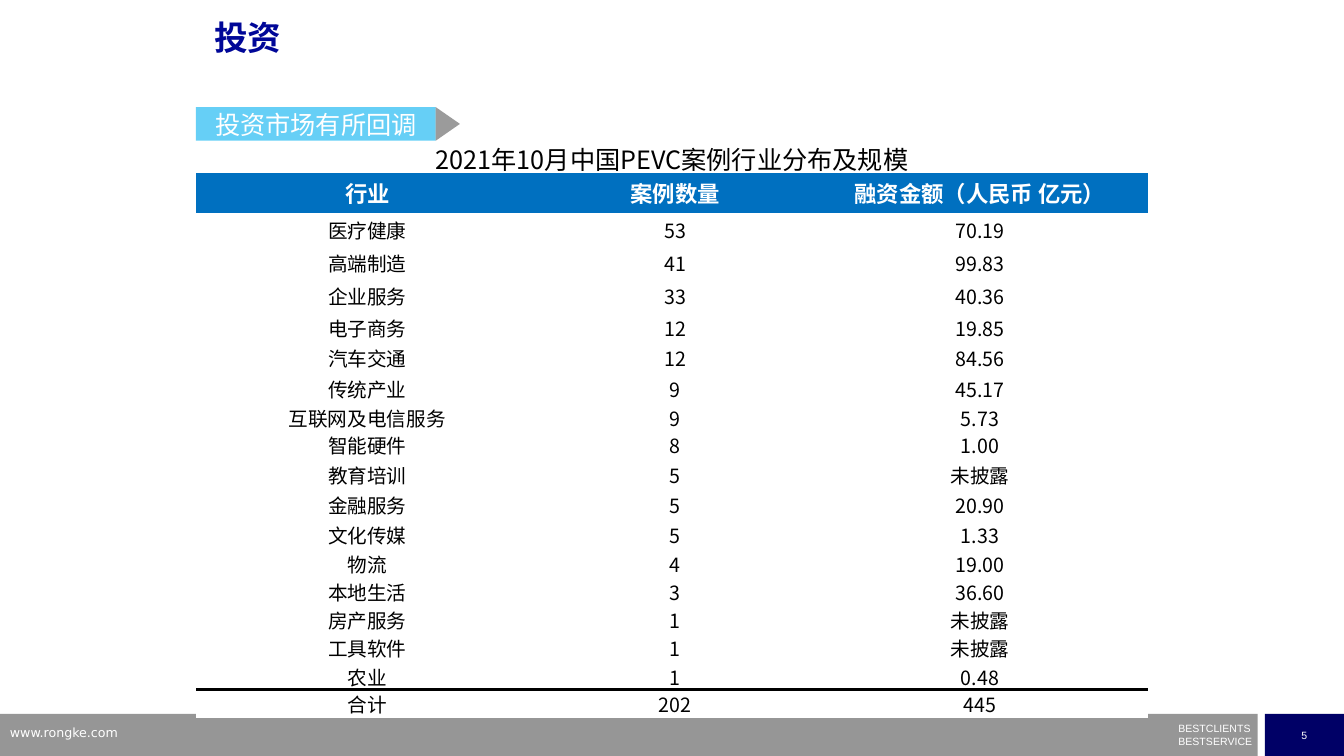
import pptx
import pptx.dml.color
import pptx.enum.shapes
import pptx.enum.text
import pptx.oxml.ns
import pptx.util
from dataclasses import dataclass
from lxml import etree

Pt = pptx.util.Pt
Shape = pptx.enum.shapes.MSO_SHAPE
Align = pptx.enum.text.PP_ALIGN
Anchor = pptx.enum.text.MSO_ANCHOR
qn = pptx.oxml.ns.qn


@dataclass(frozen=True)
class Theme:
    white: str = "FFFFFF"
    black: str = "000000"
    navy: str = "000066"
    title_blue: str = "000798"
    header_blue: str = "0070C0"
    ribbon_blue: str = "00B0F0"
    tip_gray: str = "595959"
    footer_gray: str = "969696"
    latin: str = "Arial"
    web: str = "DejaVu Sans"
    cjk: str = "Noto Sans CJK SC"
    title: float = 24
    caption: float = 18
    header: float = 16
    body: float = 14
    address: float = 9
    small: float = 7.5


THEME = Theme()
NO_STYLE_NO_GRID = "{2D5ABB26-0587-4C30-8999-92F81FD0307C}"

CAPTION = "2021年10月中国PEVC案例行业分布及规模"
HEADERS = ("行业", "案例数量", "融资金额（人民币 亿元）")
INDUSTRIES = (
    ("医疗健康", "53", "70.19"),
    ("高端制造", "41", "99.83"),
    ("企业服务", "33", "40.36"),
    ("电子商务", "12", "19.85"),
    ("汽车交通", "12", "84.56"),
    ("传统产业", "9", "45.17"),
    ("互联网及电信服务", "9", "5.73"),
    ("智能硬件", "8", "1.00"),
    ("教育培训", "5", "未披露"),
    ("金融服务", "5", "20.90"),
    ("文化传媒", "5", "1.33"),
    ("物流", "4", "19.00"),
    ("本地生活", "3", "36.60"),
    ("房产服务", "1", "未披露"),
    ("工具软件", "1", "未披露"),
    ("农业", "1", "0.48"),
)
TOTAL = ("合计", "202", "445")
COLUMN_SHARES = (0.36, 0.287, 0.353)
ROW_HEIGHTS = [23.6, 28.8] + [23.6] * 3 + [21.6] * 3 + [18.7] + [21.6] * 3 + [20.2] * 7


def rgb(color):
    return pptx.dml.color.RGBColor.from_string(color)


def write(frame, text, size, color, font=THEME.cjk, bold=False, align=Align.LEFT):
    frame.text = text
    for paragraph in frame.paragraphs:
        paragraph.alignment = align
        for run in paragraph.runs:
            run.font.name = font
            run.font.size = Pt(size)
            run.font.bold = bold
            run.font.color.rgb = rgb(color)
            east_asian = etree.SubElement(run.font._element, qn("a:ea"))
            east_asian.set("typeface", THEME.cjk)


def add_label(shapes, box, text, size, color, **style):
    frame = shapes.add_textbox(*map(Pt, box)).text_frame
    frame.word_wrap = True
    write(frame, text, size, color, **style)
    return frame


def add_block(shapes, kind, box, color, opacity=100):
    block = shapes.add_shape(kind, *map(Pt, box))
    block.shadow.inherit = False
    block.fill.solid()
    block.fill.fore_color.rgb = rgb(color)
    block.line.fill.background()
    if opacity < 100:
        color_node = block._element.spPr.find(".//" + qn("a:srgbClr"))
        etree.SubElement(color_node, qn("a:alpha")).set("val", str(opacity * 1000))
    return block


def set_margins(target, left, top, right, bottom):
    target.margin_left, target.margin_top = Pt(left), Pt(top)
    target.margin_right, target.margin_bottom = Pt(right), Pt(bottom)


def add_footer(shapes, left, top, width, height):
    page_width = 56.6
    page_left = left + width - page_width
    add_block(shapes, Shape.RECTANGLE, (left, top, page_left - 5 - left, height), THEME.footer_gray)

    # Page number
    page = add_block(shapes, Shape.RECTANGLE, (page_left, top, page_width, height), THEME.navy)
    page.text_frame.word_wrap = False
    page.text_frame.vertical_anchor = Anchor.MIDDLE
    write(page.text_frame, "5", THEME.small, THEME.white, THEME.latin, align=Align.CENTER)

    # Slogan and web address
    slogan = add_label(shapes, (page_left - 61.7, top + 10, 54.7, 14.4), "BESTCLIENTS\nBESTSERVICE",
                       THEME.small, THEME.white, font=THEME.latin)
    set_margins(slogan, 0, 0, 0, 0)
    for line in slogan.paragraphs:
        line.line_spacing = 0.5
    slogan.paragraphs[1].space_before = Pt(4.2)
    add_label(shapes, (left, top + 4.3, 230, 18.7), "www.rongke.com",
              THEME.address, THEME.white, font=THEME.web)


def add_ribbon(shapes, left, top, width, height):
    tip_depth = 17.3
    body_width = width - tip_depth
    ribbon = shapes.add_group_shape().shapes
    body = add_block(ribbon, Shape.RECTANGLE, (left, top, body_width, height), THEME.ribbon_blue, 60)
    body.text_frame.word_wrap = True
    body.text_frame.vertical_anchor = Anchor.MIDDLE
    write(body.text_frame, "投资市场有所回调", THEME.caption, THEME.white, align=Align.CENTER)

    # The tip is turned about its centre
    tip_left = left + body_width + (tip_depth - height) / 2
    tip_top = top + (height - tip_depth) / 2
    tip = add_block(ribbon, Shape.ISOSCELES_TRIANGLE, (tip_left, tip_top, height, tip_depth),
                    THEME.tip_gray, 60)
    tip.rotation = 90


def add_rule(cell, side):
    rule = etree.Element(qn("a:" + side), w=str(Pt(2.25)))
    fill = etree.SubElement(rule, qn("a:solidFill"))
    etree.SubElement(fill, qn("a:srgbClr")).set("val", THEME.black)
    cell._tc.get_or_add_tcPr().insert(0, rule)


def fill_cell(cell, text, size, color, background=None, bold=False):
    cell.vertical_anchor = Anchor.MIDDLE
    write(cell.text_frame, text, size, color, bold=bold, align=Align.CENTER)
    if background:
        cell.fill.solid()
        cell.fill.fore_color.rgb = rgb(background)
    else:
        cell.fill.background()


def add_industry_table(shapes, left, top, width, height):
    rows = (HEADERS, *INDUSTRIES, TOTAL)
    table = shapes.add_table(len(rows) + 1, len(HEADERS), *map(Pt, (left, top, width, height))).table
    table.first_row = table.horz_banding = False
    table._tbl.tblPr.find(qn("a:tableStyleId")).text = NO_STYLE_NO_GRID
    for column, share in zip(table.columns, COLUMN_SHARES):
        column.width = Pt(round(width * share, 2))
    for row, row_height in zip(table.rows, ROW_HEIGHTS):
        row.height = Pt(row_height)

    # Caption across all columns
    caption = table.cell(0, 0)
    caption.merge(table.cell(0, len(HEADERS) - 1))
    set_margins(caption, 0, 0, 0, 0)
    fill_cell(caption, CAPTION, THEME.caption, THEME.black)

    # Header, industries and total
    for r, values in enumerate(rows, start=1):
        for c, value in enumerate(values):
            cell = table.cell(r, c)
            inset = 0 if values in (HEADERS, TOTAL) else 0.7
            set_margins(cell, inset, inset, inset, 0)
            if values is HEADERS:
                fill_cell(cell, value, THEME.header, THEME.white, THEME.header_blue, bold=True)
            else:
                fill_cell(cell, value, THEME.body, THEME.black, THEME.white)
            if values is TOTAL:
                add_rule(cell, "lnT")
            elif values is INDUSTRIES[-1]:
                add_rule(cell, "lnB")


def main():
    deck = pptx.Presentation()
    deck.slide_width, deck.slide_height = Pt(960), Pt(540)
    shapes = deck.slides.add_slide(deck.slide_layouts[6]).shapes
    add_footer(shapes, 0, 510, 960, 30)
    add_ribbon(shapes, 140, 76.5, 188.5, 24)
    title = add_label(shapes, (146, 11.5, 648, 50), "投资", THEME.title, THEME.title_blue,
                      font=THEME.latin, bold=True)
    title.paragraphs[0].line_spacing = 0.9
    add_industry_table(shapes, 140, 100, 680, 412.5)
    deck.save("out.pptx")


if __name__ == "__main__":
    main()
